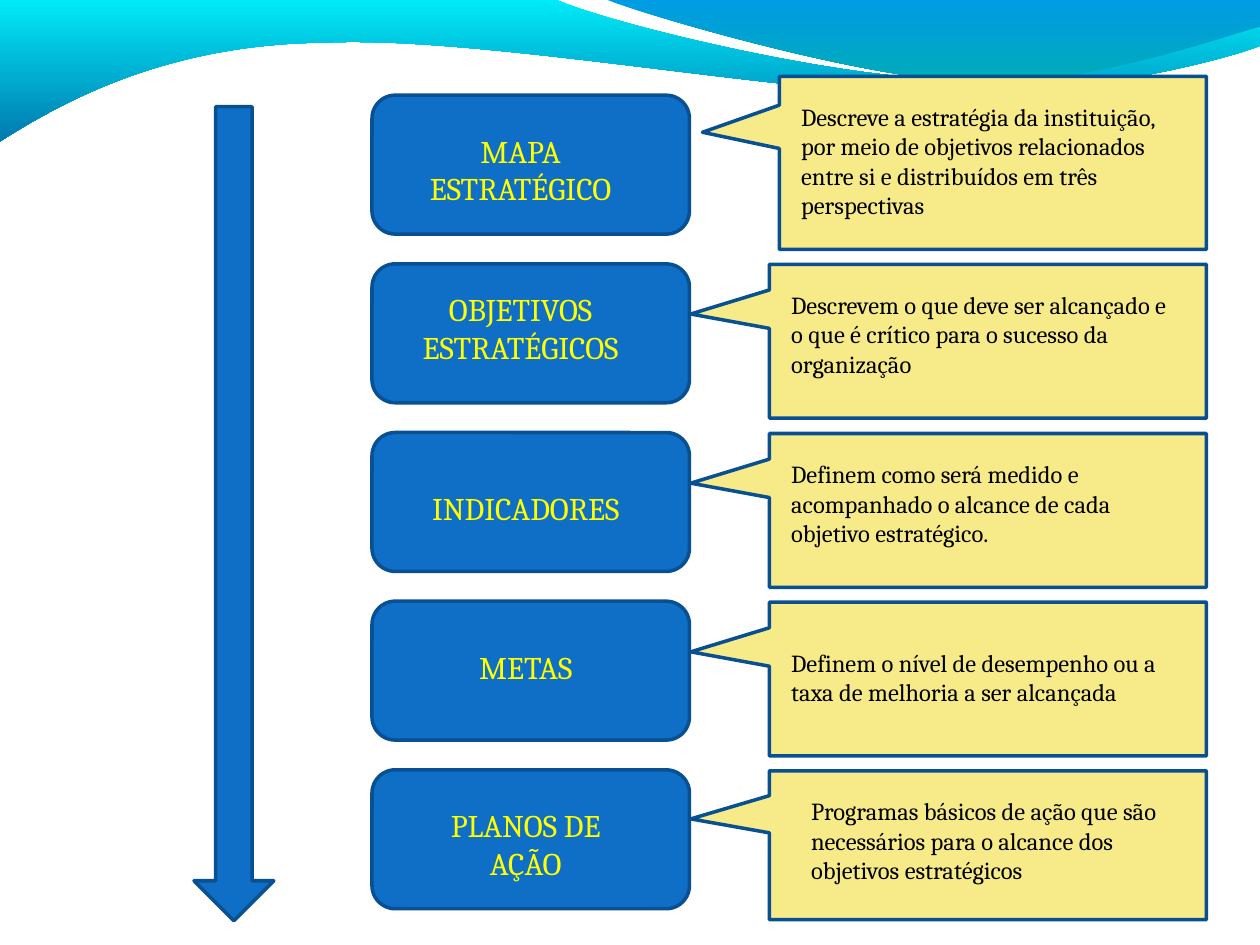
from dataclasses import dataclass

from pptx import Presentation
from pptx.dml.color import RGBColor as Rgb
from pptx.enum.shapes import MSO_SHAPE as Preset
from pptx.enum.text import MSO_AUTO_SIZE as AutoSize, PP_ALIGN as Align
from pptx.oxml.ns import qn
from pptx.util import Cm, Pt


@dataclass(frozen=True)
class Theme:
    blue: Rgb = Rgb.from_string("0F6FC6")
    outline: Rgb = Rgb.from_string("085091")
    cream: Rgb = Rgb.from_string("F7EA89")
    yellow: Rgb = Rgb.from_string("FFFF00")
    black: Rgb = Rgb.from_string("000000")
    cyan_wave: tuple = (Rgb.from_string("00EBF8"), Rgb.from_string("0079AF"))
    blue_wave: tuple = (Rgb.from_string("009BE5"), Rgb.from_string("00ADB6"))
    font: str = "Cambria"
    level_size: Pt = Pt(18)
    detail_size: Pt = Pt(14)
    border: Pt = Pt(2)


theme = Theme()
prs = Presentation()
prs.slide_width, prs.slide_height = Cm(25.4), Cm(19.05)
slide = prs.slides.add_slide(prs.slide_layouts[6])
shapes = slide.shapes


def add_outlined(preset, box, fill, adjustments, rotation=0):
    shape = shapes.add_shape(preset, *map(Cm, box))
    for index, value in enumerate(adjustments):
        shape.adjustments[index] = value
    shape.rotation = rotation
    shape.shadow.inherit = False
    shape.fill.solid()
    shape.fill.fore_color.rgb = fill
    shape.line.color.rgb = theme.outline
    shape.line.width = theme.border


def add_text(text, box, size, color, align):
    frame = shapes.add_textbox(*map(Cm, box)).text_frame
    frame.word_wrap = True
    frame.auto_size = AutoSize.SHAPE_TO_FIT_TEXT
    paragraph = frame.paragraphs[0]
    paragraph.text = text
    paragraph.alignment = align
    font = paragraph.runs[0].font
    for name, value in {"name": theme.font, "size": size}.items():
        setattr(font, name, value)
    font.color.rgb = color


waves = [
    (theme.cyan_wave, (0, -0.03), [
        [(11.18, -0.03)],
        [(12.09, 0.43), (16.87, 1.6), (19.25, 1.6)],
        [(21.67, 1.6), (24.33, 0.66), (25.4, 0.23)],
        [(25.43, 0.91)],
        [(24.97, 1.12), (22.1, 1.93), (18.95, 1.91)],
        [(15.8, 1.91), (9.7, 0.71), (6.53, 0.86)],
        [(3.28, 0.89), (1.17, 2.11), (-0.03, 2.87)],
    ]),
    (theme.blue_wave, (12.17, -0.03), [
        [(12.93, 0.28), (17.32, 1.57), (19.53, 1.65)],
        [(21.74, 1.75), (24.41, 0.81), (25.4, 0.53)],
        [(25.4, 0)],
    ]),
]
for colors, start, segments in waves:
    builder = shapes.build_freeform(*map(Cm, start))
    points = [(Cm(x), Cm(y)) for segment in segments for x, y in segment]
    builder.add_line_segments(points, close=True)
    wave = builder.convert_to_shape()
    steps = iter(list(wave._element.iter(qn("a:lnTo"))))
    for segment in segments:
        lines = [next(steps) for _ in segment]
        if len(lines) == 3:
            curve = lines[0].makeelement(qn("a:cubicBezTo"))
            lines[0].addprevious(curve)
            for line in lines:
                curve.append(line[0])
                line.getparent().remove(line)
    wave.shadow.inherit = False
    wave.line.fill.background()
    wave.fill.gradient()
    wave.fill.gradient_angle = 270
    for stop, color, position in zip(wave.fill.gradient_stops, colors, (0, 1)):
        stop.color.rgb = color
        stop.position = position

add_outlined(Preset.UP_ARROW, (3.91, 2.15, 1.61, 16.41), theme.blue, (0.455, 0.5), 180)

card_left, card_top, card_width, card_height, pitch = 7.5, 1.92, 6.4, 2.8, 3.4
callout_right = 24.32
levels = [
    ("MAPA ESTRATÉGICO", (7.89, 2.53, 5.21, 1.78), (1.54, 8.61, 3.49),
     "Descreve a estratégia da instituição, por meio de objetivos relacionados "
     "entre si e distribuídos em três perspectivas", (15.9, 1.93, 8.41, 2.62)),
    ("OBJETIVOS ESTRATÉGICOS", (7.89, 5.72, 5.21, 1.78), (5.33, 8.81, 3.1),
     "Descrevem o que deve ser alcançado e o que é crítico para o sucesso da "
     "organização", (15.7, 5.72, 8.41, 2.03)),
    ("INDICADORES", (8.1, 9.73, 5, 1.02), (8.74, 8.81, 3.1),
     "Definem como será medido e acompanhado o alcance de cada objetivo "
     "estratégico.", (15.7, 9.13, 8.41, 2.03)),
    ("METAS", (8.3, 12.93, 4.6, 1.02), (12.14, 8.81, 3.1),
     "Definem o nível de desempenho ou a taxa de melhoria a ser alcançada",
     (15.7, 12.93, 8.41, 1.45)),
    ("PLANOS DE AÇÃO", (8.3, 16.13, 4.6, 1.78), (15.54, 8.81, 3),
     "Programas básicos de ação que são necessários para o alcance dos "
     "objetivos estratégicos", (16.1, 15.93, 8.41, 2.03)),
]
for row, (level, level_box, callout, detail, detail_box) in enumerate(levels):
    card_box = (card_left, card_top + row * pitch, card_width, card_height)
    add_outlined(Preset.ROUNDED_RECTANGLE, card_box, theme.blue, (0.167,))
    add_text(level, level_box, theme.level_size, theme.yellow, Align.CENTER)

    top, length, depth = callout
    callout_box = (callout_right - (length + depth) / 2, top + (depth - length) / 2,
                   depth, length)
    add_outlined(Preset.RECTANGULAR_CALLOUT, callout_box, theme.cream, (-0.177, 0.68), 90)
    add_text(detail, detail_box, theme.detail_size, theme.black, Align.LEFT)

prs.save("out.pptx")
